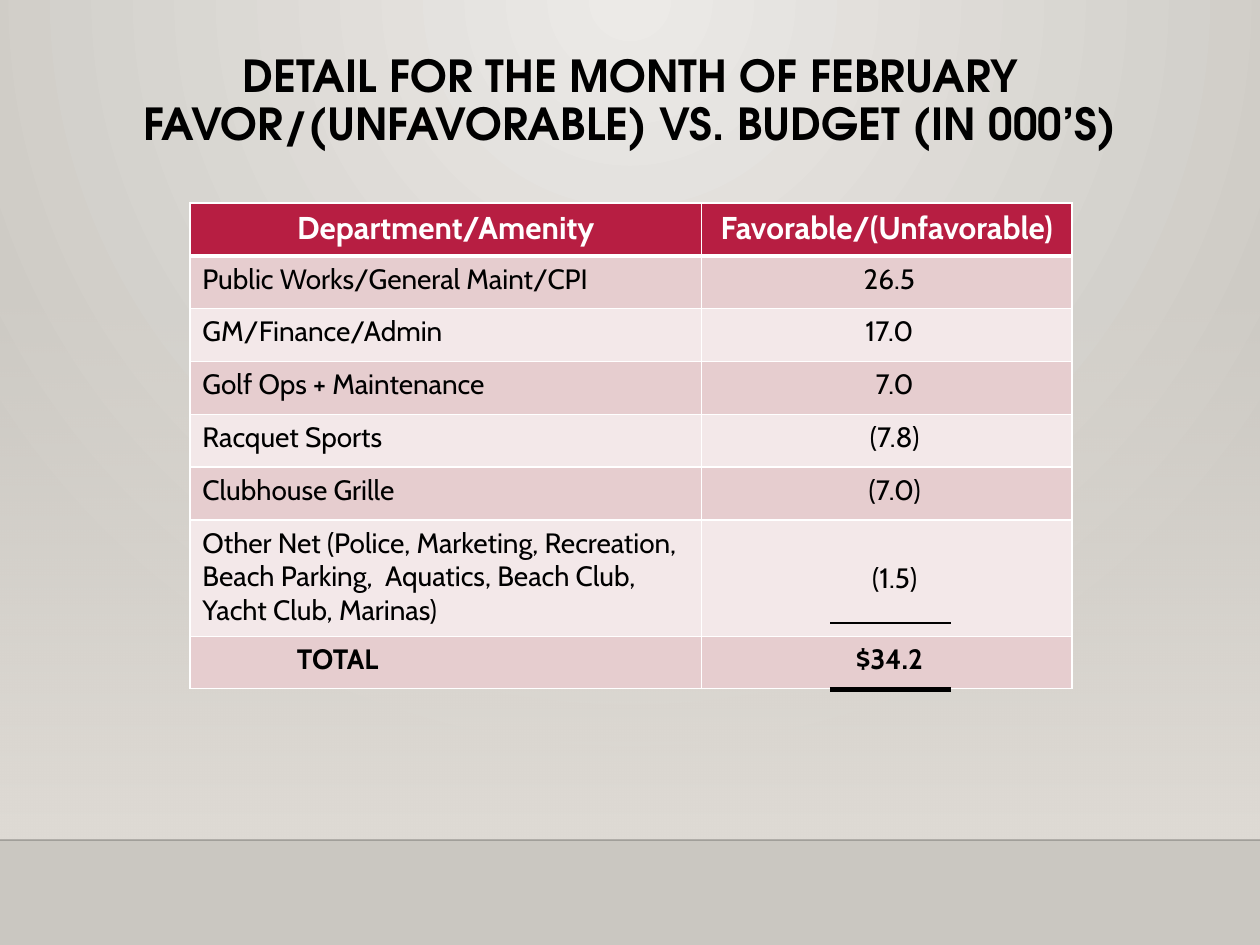
from lxml.etree import SubElement
from pptx import Presentation
from pptx.dml.color import RGBColor
from pptx.enum.shapes import MSO_CONNECTOR as Connector, MSO_SHAPE as Shape
from pptx.enum.text import MSO_ANCHOR as Anchor, PP_ALIGN as Align
from pptx.oxml.ns import qn
from pptx.util import Pt

BLACK = RGBColor(0x00, 0x00, 0x00)
WHITE = RGBColor(0xFF, 0xFF, 0xFF)
CRIMSON = RGBColor(0xB7, 0x1E, 0x42)
ROSE = RGBColor(0xE6, 0xCD, 0xCF)
PALE_ROSE = RGBColor(0xF3, 0xE8, 0xE9)
SAND = RGBColor(0xDF, 0xDB, 0xD5)
LIGHT_STONE = RGBColor(0xEC, 0xEA, 0xE7)
STONE = RGBColor(0xCA, 0xC7, 0xC1)

TITLE_FONT = "TeX Gyre Adventor"
BODY_FONT = "Cabin"
SLIDE_WIDTH, SLIDE_HEIGHT = 720, 540
FLOOR_TOP = 480
CELL_MARGIN = 7.2
TOTAL_INDENT = 54

HEADINGS = ("Department/Amenity", "Favorable/(Unfavorable)")
# Department, value, extra left margin that lines up the figures
RESULTS = [
    ("Public Works/General Maint/CPI", "26.5", 3),
    ("GM/Finance/Admin", "17.0", 3),
    ("Golf Ops + Maintenance", "7.0", 9),
    ("Racquet Sports", "(7.8)", 9),
    ("Clubhouse Grille", "(7.0)", 9),
    ("Other Net (Police, Marketing, Recreation, Beach Parking,  Aquatics, "
     "Beach Club, Yacht Club, Marinas)", "(1.5)", 9),
    ("TOTAL", "$34.2", 3),
]
COLUMN_WIDTHS = (292.5, 211.5)
ROW_HEIGHTS = [30.2] * 6 + [66.6, 29.8]


def set_gradient(fill, first, last):
    """Apply a two-stop gradient and return its XML element."""
    fill.gradient()
    stops = fill.gradient_stops
    for stop, color, position in zip(stops, (first, last), (0, 1)):
        stop.color.rgb = color
        stop.position = position
    return stops[0]._element.getparent().getparent() if hasattr(stops[0], "_element") \
        else fill._fill._gradFill


def set_alpha(color_element, percent):
    SubElement(color_element, qn("a:alpha"), val=str(percent * 1000))


def paint_background(slide):
    gradient = set_gradient(slide.background.fill, LIGHT_STONE, STONE)
    gradient.remove(gradient.find(qn("a:lin")))
    glow = SubElement(gradient, qn("a:path"))
    glow.set("path", "circle")
    SubElement(glow, qn("a:fillToRect"), l="43000", t="0", r="43000", b="100000")


def add_wall_fade(slide):
    """Add the band that fades in from clear down to the floor."""
    top = 158.5
    band = slide.shapes.add_shape(Shape.RECTANGLE, 0, Pt(top), Pt(SLIDE_WIDTH),
                                  Pt(FLOOR_TOP - top))
    band.shadow.inherit = False
    band.line.fill.background()
    gradient = set_gradient(band.fill, SAND, SAND)
    gradient.find(qn("a:lin")).set("ang", "5400000")
    set_alpha(next(gradient.iter(qn("a:srgbClr"))), 0)


def add_rule(slide, left, right, y, weight):
    rule = slide.shapes.add_connector(Connector.STRAIGHT, Pt(left), Pt(y),
                                      Pt(right), Pt(y))
    rule.line.color.rgb = BLACK
    rule.line.width = Pt(weight)
    SubElement(rule._element.spPr, qn("a:effectLst"))
    return rule


def format_text(para, font_name, size, color, bold, align):
    para.alignment = align
    for span in para.runs:
        span.font.name = font_name
        span.font.size = Pt(size)
        span.font.color.rgb = color
        span.font.bold = bold


def add_title(slide):
    title = slide.shapes.title
    title.left, title.top, title.width, title.height = (
        Pt(65), Pt(1), Pt(590), Pt(96))
    frame = title.text_frame
    frame.word_wrap = True
    frame.vertical_anchor = Anchor.MIDDLE
    frame.margin_top, frame.margin_bottom = Pt(19), 0
    frame.text = ("DETAIL FOR THE MONTH OF FEBRUARY\v"
                  "FAVOR/(UNFAVORABLE) VS. BUDGET (IN 000’S)")
    para = frame.paragraphs[0]
    para.line_spacing = 0.9
    format_text(para, TITLE_FONT, 25.2, BLACK, True, Align.CENTER)


def add_borders(cell, bottom_weight):
    properties = cell._tc.get_or_add_tcPr()
    for side, weight in zip("LRTB", (1, 1, 1, bottom_weight)):
        border = SubElement(properties, qn(f"a:ln{side}"), w=str(Pt(weight)))
        paint = SubElement(border, qn("a:solidFill"))
        SubElement(paint, qn("a:srgbClr"), val=str(WHITE))


def fill_cell(cell, text, fill, size=16, color=BLACK, bold=False,
              align=Align.LEFT, indent=0, bottom_weight=1):
    add_borders(cell, bottom_weight)
    cell.fill.solid()
    cell.fill.fore_color.rgb = fill
    cell.margin_left = Pt(CELL_MARGIN + indent)
    cell.text = text
    format_text(cell.text_frame.paragraphs[0], BODY_FONT, size, color, bold, align)


def add_results_table(slide):
    frame = slide.shapes.add_table(len(ROW_HEIGHTS), len(COLUMN_WIDTHS),
                                   Pt(108.5), Pt(116), Pt(sum(COLUMN_WIDTHS)),
                                   Pt(sum(ROW_HEIGHTS)))
    table = frame.table
    for column, width in zip(table.columns, COLUMN_WIDTHS):
        column.width = Pt(width)
    for row, height in zip(table.rows, ROW_HEIGHTS):
        row.height = Pt(height)

    for index, heading in enumerate(HEADINGS):
        fill_cell(table.cell(0, index), heading, CRIMSON, 18, WHITE, True,
                  Align.CENTER, bottom_weight=3)
    for index, (department, value, shift) in enumerate(RESULTS, start=1):
        is_total = department == "TOTAL"
        fill = ROSE if index % 2 else PALE_ROSE
        weight = 3 if index == 0 else 1
        fill_cell(table.cell(index, 0), department, fill, bold=is_total,
                  indent=TOTAL_INDENT if is_total else 0, bottom_weight=weight)
        fill_cell(table.cell(index, 1), value, fill, bold=is_total,
                  align=Align.CENTER, indent=shift, bottom_weight=weight)
    for cell in table.rows[0].cells:
        cell.vertical_anchor = Anchor.TOP
    table.cell(6, 1).vertical_anchor = Anchor.MIDDLE


def main():
    deck = Presentation()
    deck.slide_width, deck.slide_height = Pt(SLIDE_WIDTH), Pt(SLIDE_HEIGHT)
    slide = deck.slides.add_slide(deck.slide_layouts[5])
    paint_background(slide)
    add_wall_fade(slide)
    floor_edge = add_rule(slide, 0, SLIDE_WIDTH, FLOOR_TOP, 1)
    set_alpha(next(floor_edge.line._ln.iter(qn("a:srgbClr"))), 20)
    add_title(slide)
    add_results_table(slide)
    for y, weight in ((394, 3), (356, 1.25)):
        add_rule(slide, 474.5, 543.5, y, weight)
    deck.save("out.pptx")


if __name__ == "__main__":
    main()
